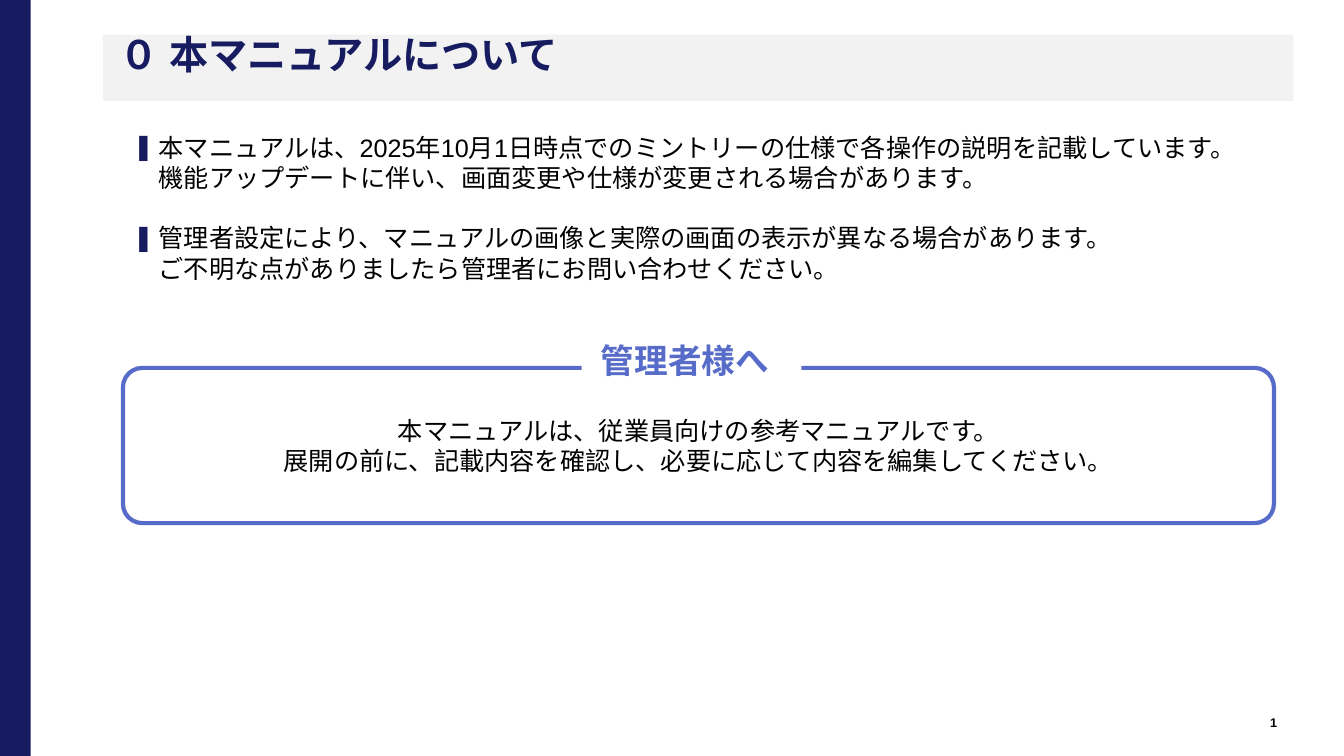
import pptx
import pptx.dml.color
import pptx.enum.shapes
import pptx.enum.text
import pptx.oxml.ns
import pptx.util
from lxml import etree

Pt = pptx.util.Pt
RGBColor = pptx.dml.color.RGBColor
Shape = pptx.enum.shapes.MSO_SHAPE
Align = pptx.enum.text.PP_ALIGN
Anchor = pptx.enum.text.MSO_ANCHOR
qn = pptx.oxml.ns.qn

NAVY = RGBColor(0x17, 0x1C, 0x61)
BLUE = RGBColor(0x57, 0x6B, 0xC9)
GREY = RGBColor(0xF2, 0xF2, 0xF2)
WHITE = RGBColor(0xFF, 0xFF, 0xFF)
BLACK = RGBColor(0, 0, 0)

NOTES = [
    ["本マニュアルは、2025年10月1日時点でのミントリーの仕様で各操作の説明を記載しています。",
     "機能アップデートに伴い、画面変更や仕様が変更される場合があります。"],
    ["管理者設定により、マニュアルの画像と実際の画面の表示が異なる場合があります。",
     "ご不明な点がありましたら管理者にお問い合わせください。"],
]
ADMIN_MESSAGE = [
    "本マニュアルは、従業員向けの参考マニュアルです。",
    "展開の前に、記載内容を確認し、必要に応じて内容を編集してください。",
]


class SlideBuilder:
    font = "Arial"
    body_size = 18
    bullet_indent = 18.5
    note_gap = 21.6

    def __init__(self, presentation):
        self.slide = presentation.slides.add_slide(presentation.slide_layouts[6])

    def box(self, left, top, width, height, fill, kind=Shape.RECTANGLE, line=None):
        shape = self.slide.shapes.add_shape(kind, Pt(left), Pt(top), Pt(width), Pt(height))
        shape.shadow.inherit = False
        shape.fill.solid()
        shape.fill.fore_color.rgb = fill
        if line is None:
            shape.line.fill.background()
        else:
            shape.line.color.rgb = line
            shape.line.width = Pt(3)
        return shape

    def text_box(self, left, top, width, height):
        return self.slide.shapes.add_textbox(Pt(left), Pt(top), Pt(width), Pt(height))

    def run(self, paragraph, text, size, color, bold=False):
        run = paragraph.add_run()
        run.text = text
        run.font.name = self.font
        run.font.size = Pt(size)
        run.font.bold = bold
        run.font.color.rgb = color
        east_asian = etree.SubElement(run.font._element, qn("a:ea"))
        east_asian.set("typeface", self.font)

    def text(self, shape, lines, size, color, bold=False, align=Align.LEFT, anchor=Anchor.MIDDLE):
        """Write one paragraph per line and return the paragraphs."""
        frame = shape.text_frame
        frame.word_wrap = True
        frame.vertical_anchor = anchor
        for index, line in enumerate(lines):
            paragraph = frame.add_paragraph() if index else frame.paragraphs[0]
            paragraph.alignment = align
            self.run(paragraph, line, size, color, bold)
        return frame.paragraphs

    def notes(self, shape, notes):
        """Write bulleted notes, each a first line and its continuation."""
        first_lines = [first for first, _ in notes]
        paragraphs = self.text(shape, first_lines, self.body_size, BLACK, anchor=Anchor.TOP)
        for index, (paragraph, (_, continuation)) in enumerate(zip(paragraphs, notes)):
            paragraph.add_line_break()
            self.run(paragraph, continuation, self.body_size, BLACK)
            paragraph.space_before = Pt(self.note_gap if index else 0)
            self.bullet(paragraph)

    def bullet(self, paragraph):
        properties = paragraph._p.get_or_add_pPr()
        properties.set("marL", str(Pt(self.bullet_indent)))
        properties.set("indent", str(-Pt(self.bullet_indent)))
        color = etree.SubElement(properties, qn("a:buClr"))
        etree.SubElement(color, qn("a:srgbClr")).set("val", str(NAVY))
        etree.SubElement(properties, qn("a:buFont")).set("typeface", self.font)
        etree.SubElement(properties, qn("a:buChar")).set("char", "❚")


def main():
    presentation = pptx.Presentation()
    presentation.slide_width = Pt(960)
    presentation.slide_height = Pt(540)
    builder = SlideBuilder(presentation)

    page_number = builder.text_box(881.3, 509, 56.9, 14.4)
    builder.text(page_number, ["1"], 9, BLACK, bold=True, align=Align.CENTER)
    builder.box(0, 0, 21.9, 540, NAVY)

    title_bar = builder.box(73.5, 24.8, 850.3, 47.2, GREY)
    title = builder.text(title_bar, ["０ 本マニュアルについて"], 28, NAVY, bold=True, anchor=Anchor.TOP)[0]
    title.line_spacing = 0.8
    title.space_before = Pt(10)
    title_bar.text_frame.margin_left = Pt(11.5)

    builder.notes(builder.text_box(87.8, 90.7, 850.3, 47.5), NOTES)

    admin_panel = builder.box(87.8, 262.8, 822.2, 110.9, WHITE, Shape.ROUNDED_RECTANGLE, BLUE)
    admin_panel.adjustments[0] = 0.125
    builder.text(admin_panel, ADMIN_MESSAGE, builder.body_size, BLACK, align=Align.CENTER)

    admin_heading = builder.box(415.4, 236.9, 157, 40.3, WHITE)
    builder.text(admin_heading, ["管理者様へ"], 24, BLUE, bold=True)
    admin_heading.text_frame.margin_left = Pt(13.9)

    presentation.save("out.pptx")


if __name__ == "__main__":
    main()
